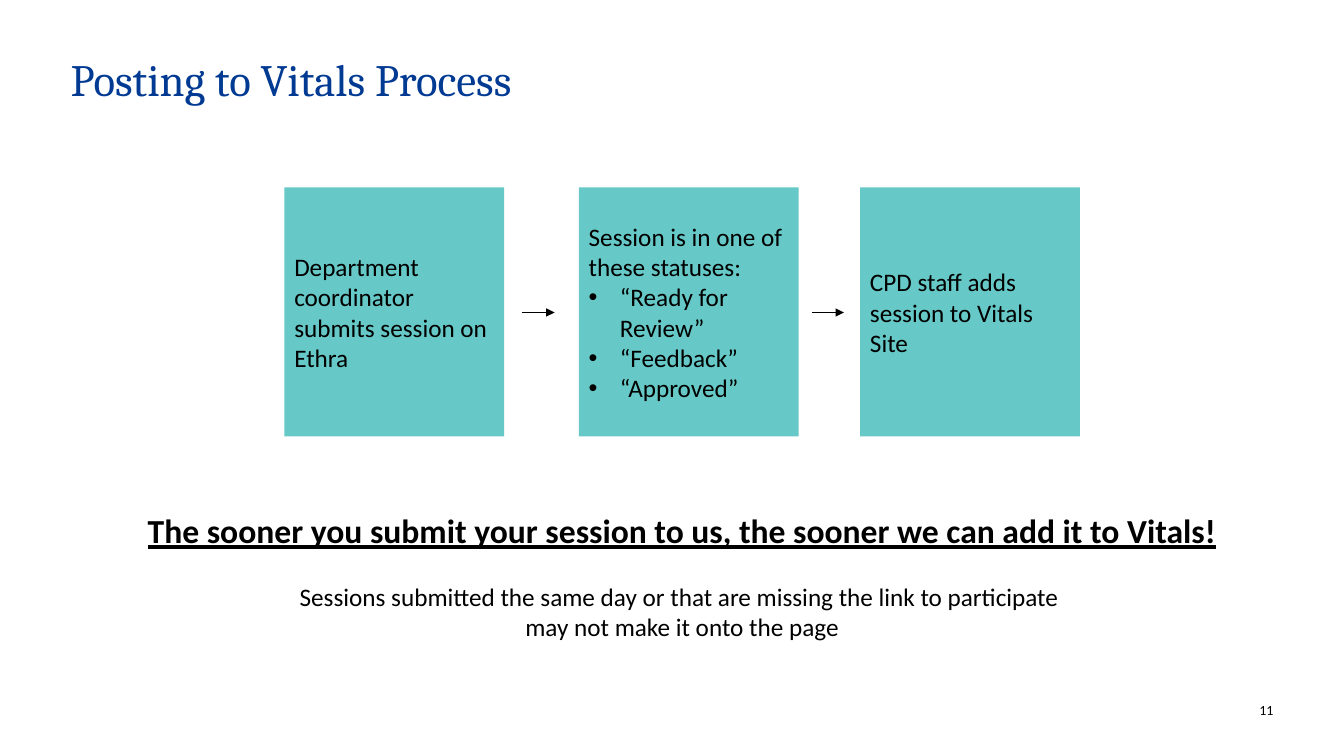
from dataclasses import dataclass

from lxml.etree import SubElement as Sub
from pptx import Presentation
from pptx.dml.color import RGBColor as Rgb
from pptx.enum.shapes import MSO_CONNECTOR as Conn, MSO_SHAPE as Kind
from pptx.enum.text import MSO_ANCHOR as Anchor, MSO_AUTO_SIZE as Fit, PP_ALIGN as Align
from pptx.oxml.ns import qn
from pptx.util import Inches, Pt

# Grid: ten columns and ten rows to the inch
COLS, ROWS = 133.3, 75
CELL = 0.1
BLACK, BLUE, TEAL = "000000", "003A93", "66C9C7"
TOP, WIDE, TALL = 18.6, 21.8, 24.7
DASH = 3.2


@dataclass
class Step:
    col: float
    text: str
    items: tuple[str, ...] = ()


STEPS = [
    Step(28.2, "Department coordinator submits session on Ethra"),
    Step(57.4, "Session is in one of these statuses:",
         ("“Ready for Review”", "“Feedback”", "“Approved”")),
    Step(85.3, "CPD staff adds session to Vitals Site"),
]
ARROWS = [51.8, 80.5]


def grid(count: float) -> int:
    return Inches(round(count * CELL, 2))


def paint(target, color: str) -> None:
    target.rgb = Rgb.from_string(color)


def style(para, size: float, color: str = BLACK, face: str = "Calibri",
          align=Align.LEFT, bold: bool = False) -> None:
    para.alignment = align
    para.space_before = para.space_after = Pt(0)
    for run in para.runs:
        font = run.font
        font.size, font.name = Pt(size), face
        font.bold = font.underline = bold
        paint(font.color, color)


def mark(para, sign: str = "", hang: float = 0) -> None:
    """Set the bullet and its hanging indent; no sign means no bullet."""
    props = para._p.get_or_add_pPr()
    props.set("marL", str(grid(hang)))
    props.set("indent", str(-grid(hang)))
    if sign:
        Sub(props, qn("a:buFont"), typeface="Arial")
        Sub(props, qn("a:buChar"), char=sign)
    else:
        Sub(props, qn("a:buNone"))


def place(shape, col: float, row: float, wide: float, tall: float):
    """Move a text shape and strip its margins."""
    shape.left, shape.top = grid(col), grid(row)
    shape.width, shape.height = grid(wide), grid(tall)
    frame = shape.text_frame
    frame.margin_left = frame.margin_right = 0
    frame.margin_top = frame.margin_bottom = 0
    frame.word_wrap, frame.auto_size = True, Fit.NONE
    frame.vertical_anchor = Anchor.TOP
    return frame


def draw_step(slide, step: Step) -> None:
    box = slide.shapes.add_shape(Kind.RECTANGLE, grid(step.col), grid(TOP),
                                 grid(WIDE), grid(TALL))
    box.shadow.inherit = False
    box.fill.solid()
    paint(box.fill.fore_color, TEAL)
    box.line.fill.background()
    frame = box.text_frame
    frame.word_wrap, frame.vertical_anchor = True, Anchor.MIDDLE
    frame.text = "\n".join((step.text, *step.items))
    for para in frame.paragraphs[1:]:
        mark(para, "•", 3.1)
    for para in frame.paragraphs:
        style(para, 18)


def draw_arrow(slide, col: float) -> None:
    row = grid(TOP + TALL / 2)
    line = slide.shapes.add_connector(Conn.STRAIGHT, grid(col), row,
                                      grid(col + DASH), row)
    paint(line.line.color, BLACK)
    line.line.width = Pt(1)
    Sub(line.line._get_or_add_ln(), qn("a:tailEnd"), type="triangle")
    Sub(line._element.spPr, qn("a:effectLst"))


def main() -> None:
    deck = Presentation()
    deck.slide_width, deck.slide_height = grid(COLS), grid(ROWS)
    slide = deck.slides.add_slide(deck.slide_layouts[1])

    # Title
    frame = place(slide.shapes.title, 7, 5.7, 119.2, 10.5)
    frame.text = "Posting to Vitals Process"
    head = frame.paragraphs[0]
    style(head, 32, BLUE, "Cambria")
    head.line_spacing = 0.9

    # Process flow
    for step in STEPS:
        draw_step(slide, step)
    for col in ARROWS:
        draw_arrow(slide, col)

    # Closing message
    frame = place(slide.placeholders[1], 13.9, 50.6, 107.5, 18.7)
    frame.text = ("The sooner you submit your session to us, the sooner we can add it to Vitals!\n"
                  "Sessions submitted the same day or that are missing the link to participate \v"
                  "may not make it onto the page")
    call, note = frame.paragraphs
    for para in (call, note):
        mark(para)
    style(call, 24, align=Align.CENTER, bold=True)
    style(note, 18, align=Align.CENTER)
    note.space_before = Pt(22)

    # Page number
    page = slide.shapes.add_textbox(0, 0, 0, 0)
    frame = place(page, 122.5, 69.6, 3.8, 1.7)
    frame.text = "11"
    style(frame.paragraphs[0], 10, align=Align.RIGHT)

    deck.save("out.pptx")


if __name__ == "__main__":
    main()
